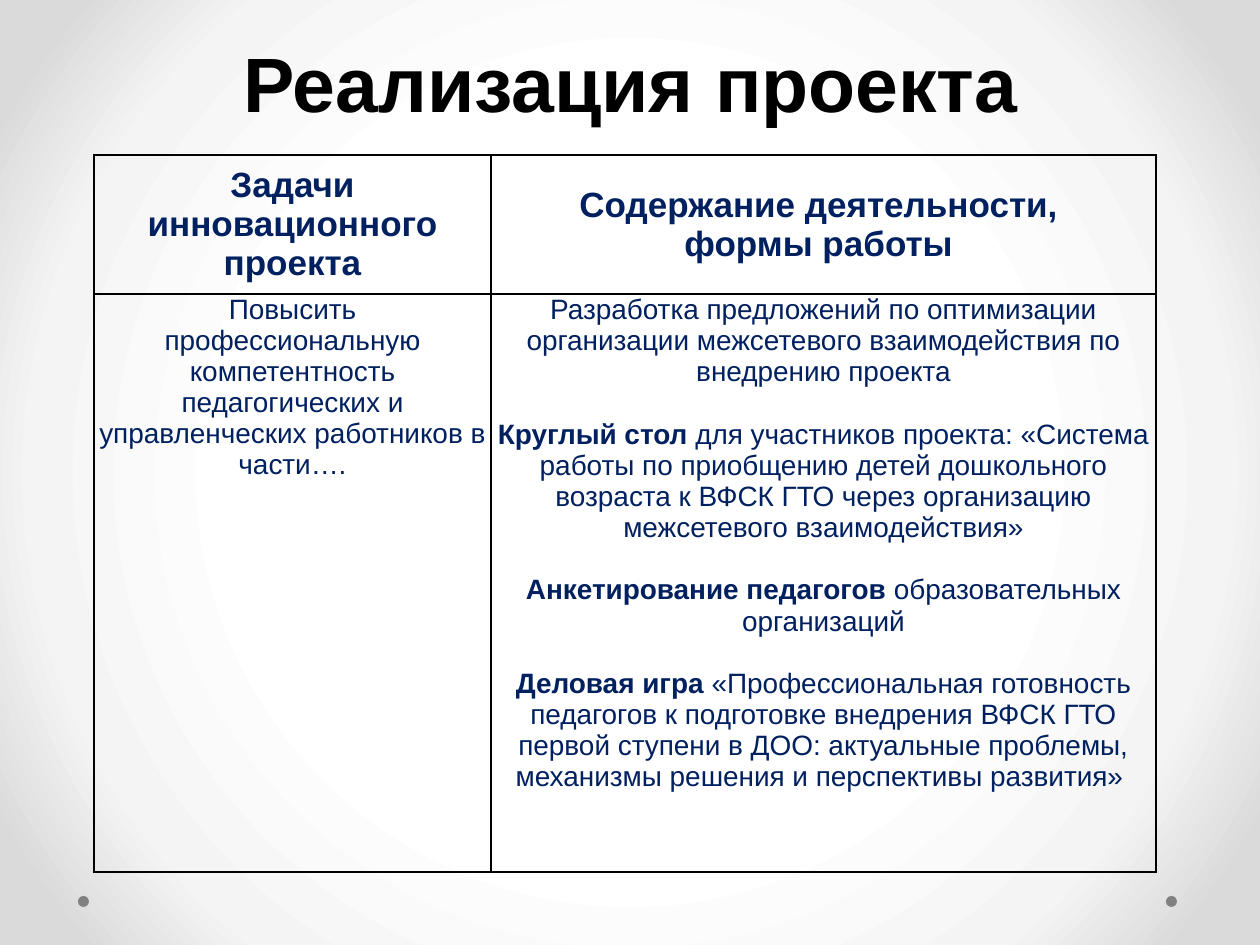
from dataclasses import dataclass
from lxml import etree
from pptx import Presentation
from pptx import util as u
from pptx.dml.color import RGBColor
from pptx.enum import shapes, text
from pptx.oxml import parse_xml
from pptx.oxml.ns import qn, nsdecls

SCALE = 914400 / 126


@dataclass(frozen=True)
class Theme:
    font: str = "Arial"
    black: str = "000000"
    navy: str = "002060"
    gray: str = "808080"
    back: tuple = ((50, "FFFFFF"), (76, "F4F4F4"), (92, "DADADA"))
    title: int = 44
    head: int = 20
    body: int = 16
    gap: int = 18


T = Theme()
MID = text.MSO_ANCHOR.MIDDLE
TOP = text.MSO_ANCHOR.TOP

HEADS = (
    [[("Задачи инновационного проекта", True)]],
    [[("Содержание деятельности, ", True)], [("формы работы ", True)]],
)
BODIES = (
    [[("Повысить профессиональную компетентность педагогических и "
       "управленческих работников в части….", False)]],
    [
        [("Разработка предложений по оптимизации организации межсетевого "
          "взаимодействия по внедрению проекта", False)],
        [("Круглый стол ", True),
         ("для участников проекта: «Система работы по приобщению детей "
          "дошкольного возраста к ВФСК ГТО через организацию "
          "межсетевого взаимодействия»", False)],
        [("Анкетирование педагогов", True),
         (" образовательных организаций", False)],
        [("Деловая игра ", True),
         ("«Профессиональная готовность педагогов к подготовке внедрения "
          "ВФСК ГТО первой ступени в ДОО: актуальные проблемы, механизмы "
          "решения и перспективы развития» ", False)],
    ],
)


def px(n):
    return u.Emu(round(n * SCALE))


def write(frame, paras, size, color, gap=0, line=None):
    for i, runs in enumerate(paras):
        par = frame.paragraphs[0] if i == 0 else frame.add_paragraph()
        par.alignment = text.PP_ALIGN.CENTER
        par.space_before = u.Pt(gap if i else 0)
        if line:
            par.line_spacing = u.Pt(line)
        for words, bold in runs:
            run = par.add_run()
            run.text = words
            font = run.font
            font.name, font.size, font.bold = T.font, u.Pt(size), bold
            font.color.rgb = RGBColor.from_string(color)


def paint(slide):
    stops = "".join(
        f'<a:gs pos="{pos * 1000}"><a:srgbClr val="{color}"/></a:gs>'
        for pos, color in T.back)
    back = parse_xml(
        f'<p:bg {nsdecls("p", "a")}><p:bgPr><a:gradFill rotWithShape="1">'
        f'<a:gsLst>{stops}</a:gsLst><a:path path="circle">'
        '<a:fillToRect l="50000" t="50000" r="50000" b="50000"/></a:path>'
        '</a:gradFill><a:effectLst/></p:bgPr></p:bg>')
    slide.element.find(qn("p:cSld")).insert(0, back)


def add_dot(slide, x, y, size):
    dot = slide.shapes.add_shape(
        shapes.MSO_SHAPE.OVAL, px(x), px(y), px(size), px(size))
    dot.shadow.inherit = False
    dot.fill.solid()
    dot.fill.fore_color.rgb = RGBColor.from_string(T.gray)
    dot.line.fill.background()


def set_title(slide, words):
    title = slide.shapes.title
    title.left, title.top = px(64), px(16)
    title.width, title.height = px(1134), px(118)
    frame = title.text_frame
    frame.auto_size = text.MSO_AUTO_SIZE.NONE
    frame.vertical_anchor = text.MSO_ANCHOR.BOTTOM
    write(frame, [[(words, True)]], T.title, T.black, line=58)


def add_edges(cell):
    props = cell._tc.get_or_add_tcPr()
    for i, side in enumerate(("lnL", "lnR", "lnT", "lnB")):
        edge = etree.Element(qn(f"a:{side}"), w=str(u.Pt(1)))
        fill = etree.SubElement(edge, qn("a:solidFill"))
        etree.SubElement(fill, qn("a:srgbClr"), val=T.black)
        props.insert(i, edge)


def fill_cell(cell, paras, size, anchor):
    cell.margin_left = cell.margin_right = px(5)
    cell.margin_top = cell.margin_bottom = 0
    cell.vertical_anchor = anchor
    cell.fill.background()
    add_edges(cell)
    write(cell.text_frame, paras, size, T.navy,
          gap=T.gap if size == T.body else 0)


def add_grid(slide):
    cols, rows = (397, 665), (139, 578)
    grid = slide.shapes.add_table(
        2, 2, px(94), px(155), px(sum(cols)), px(sum(rows))).table
    grid.first_row = grid.horz_banding = False
    for col, wide in zip(grid.columns, cols):
        col.width = px(wide)
    for row, high in zip(grid.rows, rows):
        row.height = px(high)
    kinds = ((HEADS, T.head, MID), (BODIES, T.body, TOP))
    for r, (cells, size, anchor) in enumerate(kinds):
        for c, paras in enumerate(cells):
            fill_cell(grid.cell(r, c), paras, size, anchor)


def main():
    deck = Presentation()
    deck.slide_width, deck.slide_height = px(1260), px(945)
    slide = deck.slides.add_slide(deck.slide_layouts[5])
    paint(slide)
    for x in (1166, 78):
        add_dot(slide, x, 896, 11)
    set_title(slide, "Реализация проекта")
    add_grid(slide)
    deck.save("out.pptx")


if __name__ == "__main__":
    main()
